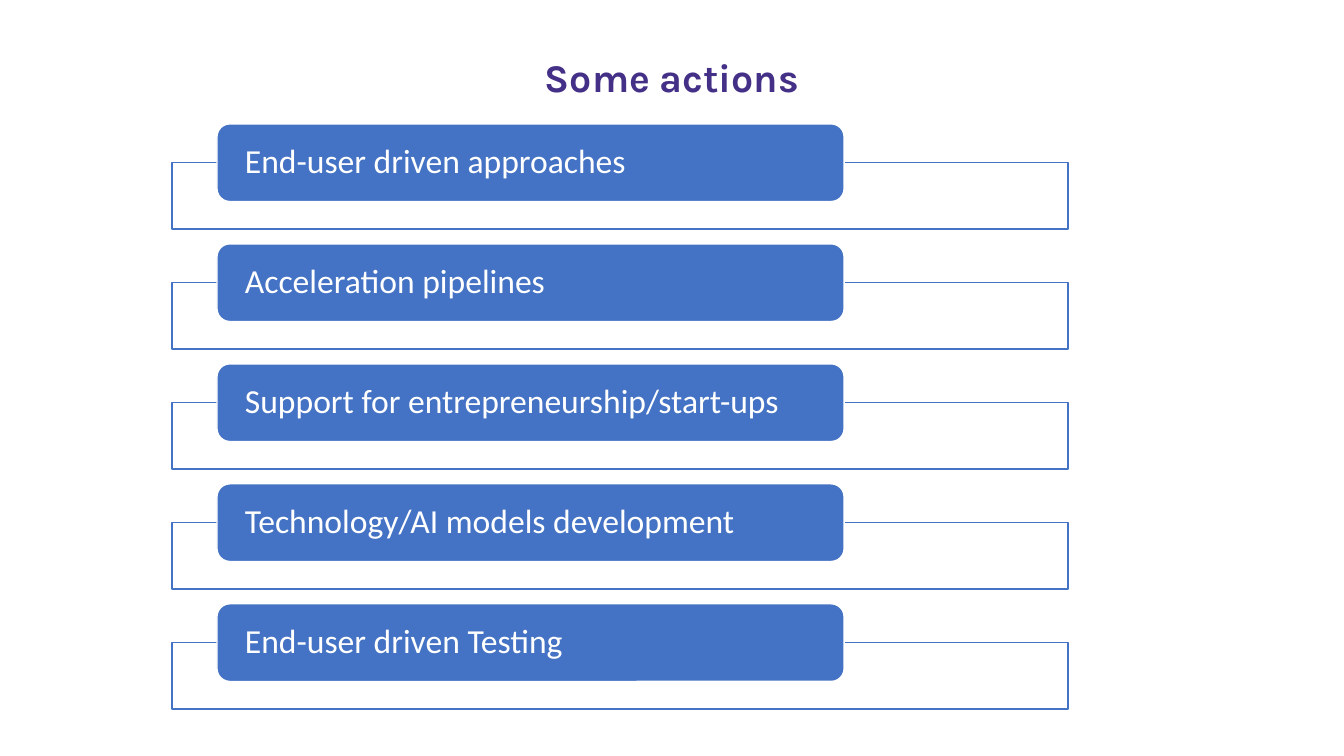
"""Build a slide listing actions as labelled bars over outlined boxes."""
from pptx import Presentation
from pptx.dml.color import RGBColor
from pptx.enum import shapes, text
from pptx.util import Pt

TITLE = "Some actions"
ACTIONS = [
    "End-user driven approaches",
    "Acceleration pipelines",
    "Support for entrepreneurship/start-ups",
    "Technology/AI models development",
    "End-user driven Testing",
]

PURPLE = RGBColor(0x44, 0x31, 0x87)
BLUE = RGBColor(0x44, 0x72, 0xC4)
WHITE = RGBColor(0xFF, 0xFF, 0xFF)

FIRST_TOP = 88.5
ROW_PITCH = 85.7
BOX_LEFT, BOX_WIDTH, BOX_HEIGHT = 123, 640, 47.5
BAR_LEFT, BAR_WIDTH, BAR_HEIGHT = 155, 448, 55.5
BAR_INSET = 20


def write_text(shape, words, font, size, color, bold=False,
               align=text.PP_ALIGN.LEFT, inset=7.2):
    """Write one formatted paragraph into a shape."""
    frame = shape.text_frame
    frame.word_wrap = True
    frame.auto_size = text.MSO_AUTO_SIZE.NONE
    frame.vertical_anchor = text.MSO_ANCHOR.MIDDLE
    frame.margin_left = frame.margin_right = Pt(inset)
    frame.margin_top = frame.margin_bottom = 0
    paragraph = frame.paragraphs[0]
    paragraph.alignment = align
    paragraph.line_spacing = 0.9
    run = paragraph.add_run()
    run.text = words
    run.font.name = font
    run.font.size = Pt(size)
    run.font.bold = bold
    run.font.color.rgb = color


def add_block(slide, kind, left, top, width, height, fill, line):
    """Add a flat preset shape with a one-point outline."""
    shape = slide.shapes.add_shape(kind, Pt(left), Pt(top), Pt(width), Pt(height))
    shape.shadow.inherit = False
    shape.fill.solid()
    shape.fill.fore_color.rgb = fill
    shape.line.color.rgb = line
    shape.line.width = Pt(1)
    return shape


def main():
    """Create and save the presentation."""
    presentation = Presentation()
    presentation.slide_width, presentation.slide_height = Pt(960), Pt(540)
    slide = presentation.slides.add_slide(presentation.slide_layouts[5])

    title = slide.shapes.title
    title.left, title.top, title.width, title.height = Pt(92), Pt(37.5), Pt(776), Pt(39)
    write_text(title, TITLE, "Karla", 28, PURPLE, bold=True,
               align=text.PP_ALIGN.CENTER)

    for row, action in enumerate(ACTIONS):
        top = FIRST_TOP + row * ROW_PITCH
        add_block(slide, shapes.MSO_SHAPE.RECTANGLE, BOX_LEFT, top + BAR_HEIGHT / 2,
                  BOX_WIDTH, BOX_HEIGHT, WHITE, BLUE)
        bar = add_block(slide, shapes.MSO_SHAPE.ROUNDED_RECTANGLE, BAR_LEFT, top,
                        BAR_WIDTH, BAR_HEIGHT, BLUE, WHITE)
        write_text(bar, action, "Calibri", 24, WHITE, inset=BAR_INSET - 2.7)

    presentation.save("out.pptx")


if __name__ == "__main__":
    main()
